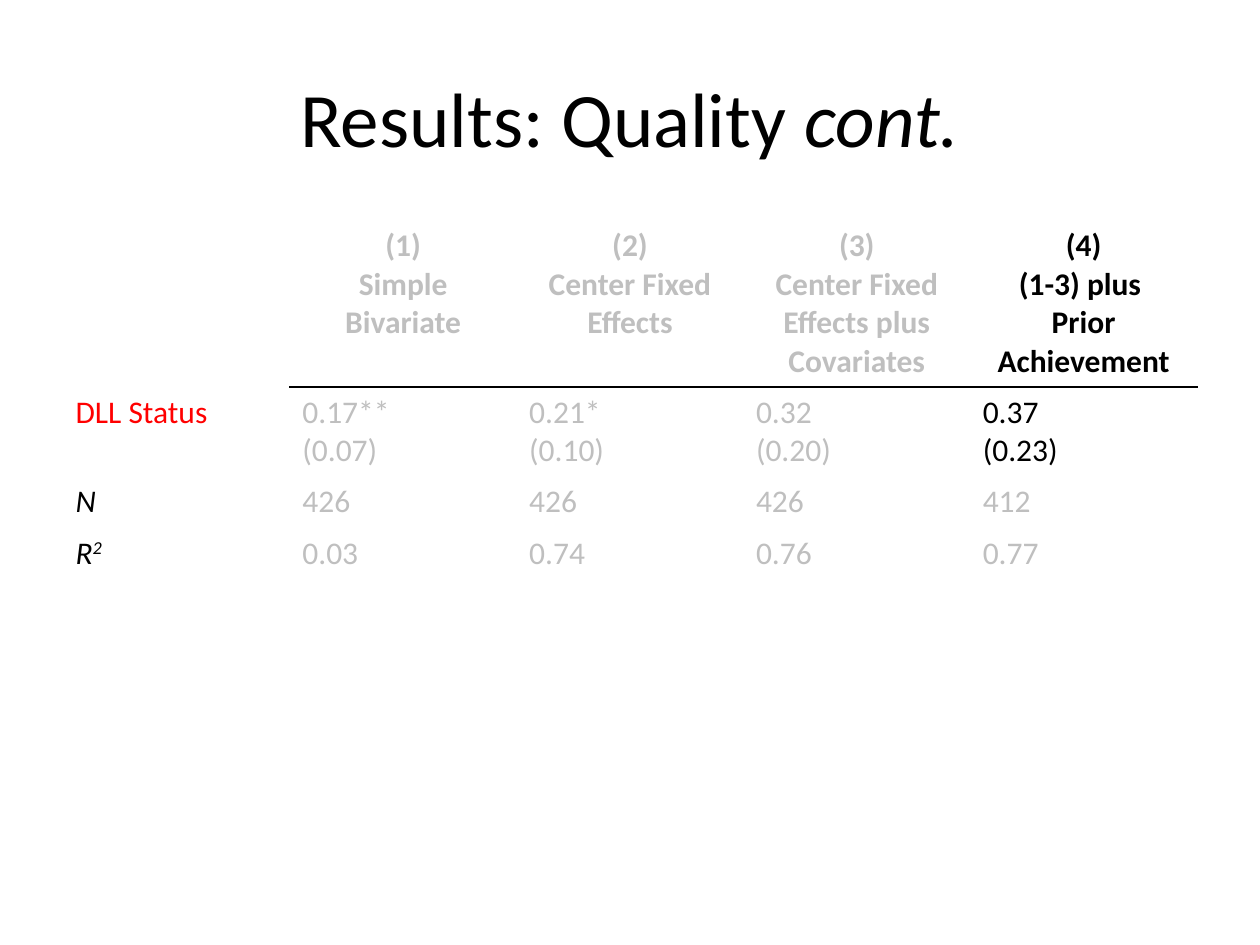
from lxml import etree
from pptx import Presentation
from pptx.dml.color import RGBColor
from pptx.enum.text import MSO_ANCHOR, PP_ALIGN
from pptx.oxml.ns import qn
from pptx.util import Inches, Pt

CENTER = PP_ALIGN.CENTER
LEFT = PP_ALIGN.LEFT
MIDDLE = MSO_ANCHOR.MIDDLE
BLACK, GRAY, RED, WHITE = "000000", "BFBFBF", "FF0000", "FFFFFF"


def style_span(span, size, color, bold=False, italic=False):
    font = span.font
    font.name = "Calibri"
    font.size = Pt(size)
    font.bold = bold
    font.italic = italic
    font.color.rgb = RGBColor.from_string(color)


def add_rule(cell, side):
    line = etree.Element(qn(f"a:{side}"), w=str(Pt(1)))
    fill = etree.SubElement(line, qn("a:solidFill"))
    etree.SubElement(fill, qn("a:srgbClr"), val=BLACK)
    cell._tc.get_or_add_tcPr().insert(0, line)


deck = Presentation()
deck.slide_width = Inches(10)
deck.slide_height = Inches(7.5)
page = deck.slides.add_slide(deck.slide_layouts[5])

title = page.shapes.title
title.left, title.top = Inches(0.5), Inches(0.3)
title.width, title.height = Inches(9), Inches(1.25)
title.text_frame.text = "Results: Quality "
title.text_frame.vertical_anchor = MIDDLE
title_para = title.text_frame.paragraphs[0]
title_para.alignment = CENTER
style_span(title_para.runs[0], 44, BLACK)
suffix = title_para.add_run()
suffix.text = "cont."
style_span(suffix, 44, BLACK, italic=True)

results = [
    ["", "(1)\nSimple Bivariate", "(2)\nCenter Fixed Effects",
     "(3)\nCenter Fixed Effects plus Covariates",
     "(4)\n(1-3) plus \nPrior Achievement"],
    ["DLL Status", "0.17**\n(0.07)", "0.21*\n(0.10)", "0.32\n(0.20)", "0.37\n(0.23)"],
    ["N", "426", "426", "426", "412"],
    ["R", "0.03", "0.74", "0.76", "0.77"],
]
row_heights = [1.3, 0.7, 0.41, 0.41]

table = page.shapes.add_table(
    len(results), len(results[0]),
    Inches(0.5), Inches(1.75), Inches(9), Inches(sum(row_heights))).table
table.first_row = False
table.horz_banding = False
for column in table.columns:
    column.width = Inches(1.8)

for row, values in enumerate(results):
    table.rows[row].height = Inches(row_heights[row])
    for col, value in enumerate(values):
        cell = table.cell(row, col)
        cell.fill.solid()
        cell.fill.fore_color.rgb = RGBColor.from_string(WHITE)
        cell.text_frame.text = value
        if col == 0:
            color = RED if row == 1 else BLACK
        else:
            color = BLACK if col == 4 and row < 2 else GRAY
        for para in cell.text_frame.paragraphs:
            para.alignment = CENTER if row == 0 else LEFT
            para.font.size = Pt(18)
            for span in para.runs:
                style_span(span, 18, color, bold=row == 0, italic=col == 0 and row > 1)
        if col > 0 and row < 2:
            add_rule(cell, "lnB" if row == 0 else "lnT")

square = table.cell(3, 0).text_frame.paragraphs[0].add_run()
square.text = "2"
style_span(square, 18, BLACK, italic=True)
square.font._element.set("baseline", "30000")

deck.save("out.pptx")
